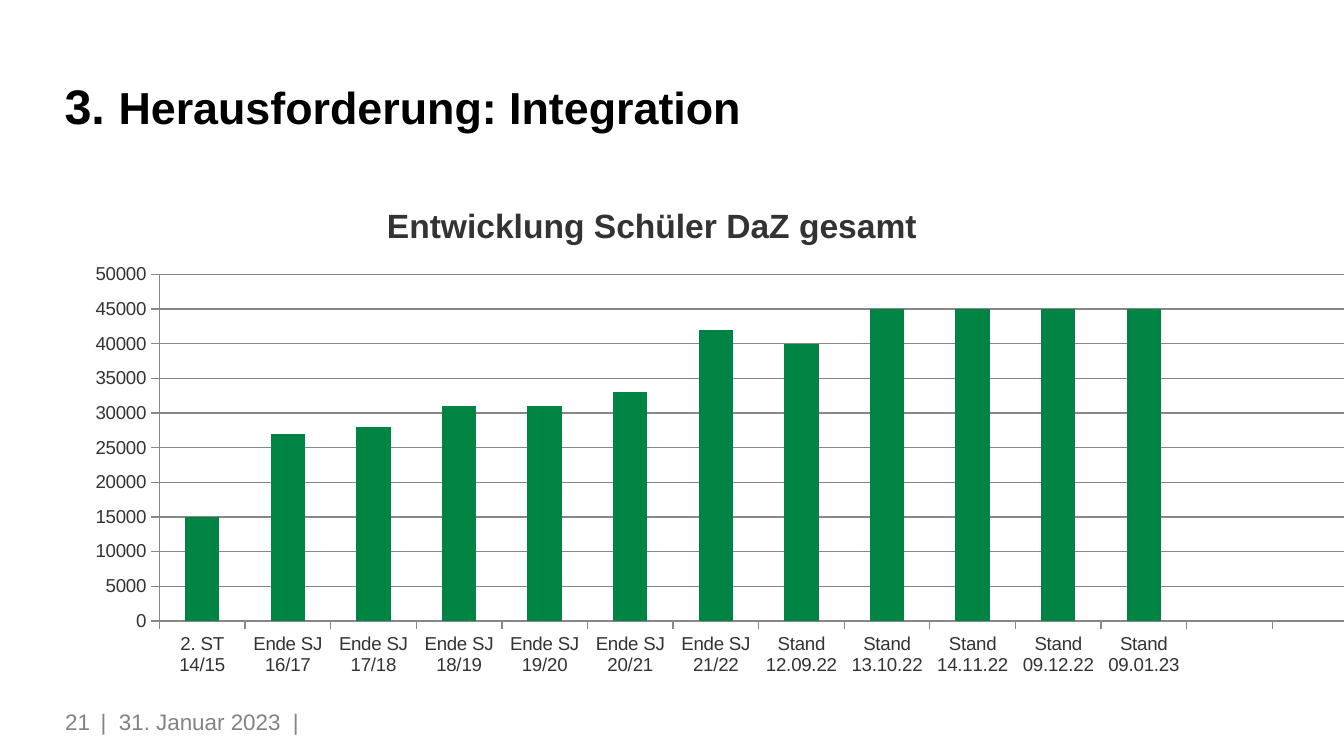
import pptx
import pptx.chart.data
import pptx.dml.color
import pptx.enum.chart
import pptx.enum.text
import pptx.oxml
import pptx.oxml.ns
import pptx.util

BLACK = pptx.dml.color.RGBColor(0x00, 0x00, 0x00)
DARK = pptx.dml.color.RGBColor(0x33, 0x33, 0x33)
GREY = pptx.dml.color.RGBColor(0x82, 0x84, 0x80)
LINE = pptx.dml.color.RGBColor(0x87, 0x87, 0x87)
GREEN = pptx.dml.color.RGBColor(0x00, 0x84, 0x44)

PUPILS = {
    "2. ST 14/15": 15000,
    "Ende SJ 16/17": 27000,
    "Ende SJ 17/18": 28000,
    "Ende SJ 18/19": 31000,
    "Ende SJ 19/20": 31000,
    "Ende SJ 20/21": 33000,
    "Ende SJ 21/22": 42000,
    "Stand 12.09.22": 40000,
    "Stand 13.10.22": 45000,
    "Stand 14.11.22": 45000,
    "Stand 09.12.22": 45000,
    "Stand 09.01.23": 45000,
}
EMPTY_SLOTS = 5


class SlideBuilder:
    """Holds the style and the current slide; lengths are percentages of the slide's size."""

    font_name = "Arial"

    def __init__(self, prs):
        self.prs = prs
        self.slide = prs.slides.add_slide(prs.slide_layouts[5])

    def box(self, left, top, width, height):
        w, h = self.prs.slide_width / 100, self.prs.slide_height / 100
        return int(left * w), int(top * h), int(width * w), int(height * h)

    def style(self, font, size, color, bold=False):
        font.name = self.font_name
        font.size = pptx.util.Pt(size)
        font.color.rgb = color
        font.bold = bold

    def frame(self, sp, anchor):
        tf = sp.text_frame
        tf.word_wrap = True
        tf.auto_size = pptx.enum.text.MSO_AUTO_SIZE.NONE
        tf.vertical_anchor = anchor
        tf.margin_left = tf.margin_top = tf.margin_right = tf.margin_bottom = 0
        return tf

    def title(self, box, runs):
        sp = self.slide.shapes.title
        sp.left, sp.top, sp.width, sp.height = self.box(*box)
        p = self.frame(sp, pptx.enum.text.MSO_ANCHOR.BOTTOM).paragraphs[0]
        p.alignment = pptx.enum.text.PP_ALIGN.LEFT
        for text, size in runs:
            r = p.add_run()
            r.text = text
            self.style(r.font, size, BLACK, True)

    def footer(self, box, text, align):
        sp = self.slide.shapes.add_textbox(*self.box(*box))
        p = self.frame(sp, pptx.enum.text.MSO_ANCHOR.MIDDLE).paragraphs[0]
        p.text = text
        p.alignment = align
        self.style(p.runs[0].font, 12, GREY)

    def place(self, element, **shares):
        for old in element.findall(pptx.oxml.ns.qn("c:layout")):
            element.remove(old)
        target = '<c:layoutTarget val="inner"/>' if "w" in shares else ""
        modes = "".join(f'<c:{k}Mode val="edge"/>' for k in "xy")
        values = "".join(f'<c:{k} val="{v}"/>' for k, v in shares.items())
        layout = pptx.oxml.parse_xml(
            f'<c:layout {pptx.oxml.ns.nsdecls("c")}><c:manualLayout>'
            f"{target}{modes}{values}</c:manualLayout></c:layout>")
        tx = element.find(pptx.oxml.ns.qn("c:tx"))
        element.insert(0 if tx is None else 1, layout)

    def columns(self, box, heading, values, empty):
        data = pptx.chart.data.CategoryChartData()
        data.categories = list(values)
        data.add_series("Series 1", list(values.values()) + [None] * empty)
        kind = pptx.enum.chart.XL_CHART_TYPE.COLUMN_CLUSTERED
        chart = self.slide.shapes.add_chart(kind, *self.box(*box), data).chart
        chart.has_legend = False
        self.style(chart.font, 10, DARK)
        chart.has_title = True
        tf = chart.chart_title.text_frame
        tf.text = heading
        self.style(tf.paragraphs[0].runs[0].font, 18, DARK, True)
        chart.chart_title.include_in_layout = False
        self.place(chart.chart_title._element, x=0.2, y=0.04)

        plot = chart.plots[0]
        self.place(plot._element.getparent(), x=0.06, y=0.19, w=0.92, h=0.68)
        plot.gap_width = 150
        plot.vary_by_categories = False
        fill = plot.series[0].format.fill
        fill.solid()
        fill.fore_color.rgb = GREEN

        axis = chart.value_axis
        axis.minimum_scale, axis.maximum_scale, axis.major_unit = 0, 50000, 5000
        axis.has_major_gridlines = True
        for part in (axis, chart.category_axis, axis.major_gridlines):
            part.format.line.color.rgb = LINE
            part.format.line.width = pptx.util.Pt(0.75)
        for ax in (axis, chart.category_axis):
            ax.major_tick_mark = pptx.enum.chart.XL_TICK_MARK.OUTSIDE
            ax.minor_tick_mark = pptx.enum.chart.XL_TICK_MARK.NONE


def main():
    prs = pptx.Presentation()
    prs.slide_width = pptx.util.Inches(10)
    prs.slide_height = prs.slide_width * 9 // 16
    s = SlideBuilder(prs)
    s.title((4.8, 6.4, 72.8, 11.4), [("3. ", 26), ("Herausforderung: Integration", 24)])
    s.footer((7.5, 90.8, 49.6, 9.2), "|  31. Januar 2023  |", pptx.enum.text.PP_ALIGN.LEFT)
    s.footer((0, 90.8, 6.7, 9.2), "21", pptx.enum.text.PP_ALIGN.RIGHT)
    s.columns((4.8, 23.5, 117.7, 67.4), "Entwicklung Schüler DaZ gesamt", PUPILS, EMPTY_SLOTS)
    prs.save("out.pptx")


if __name__ == "__main__":
    main()
